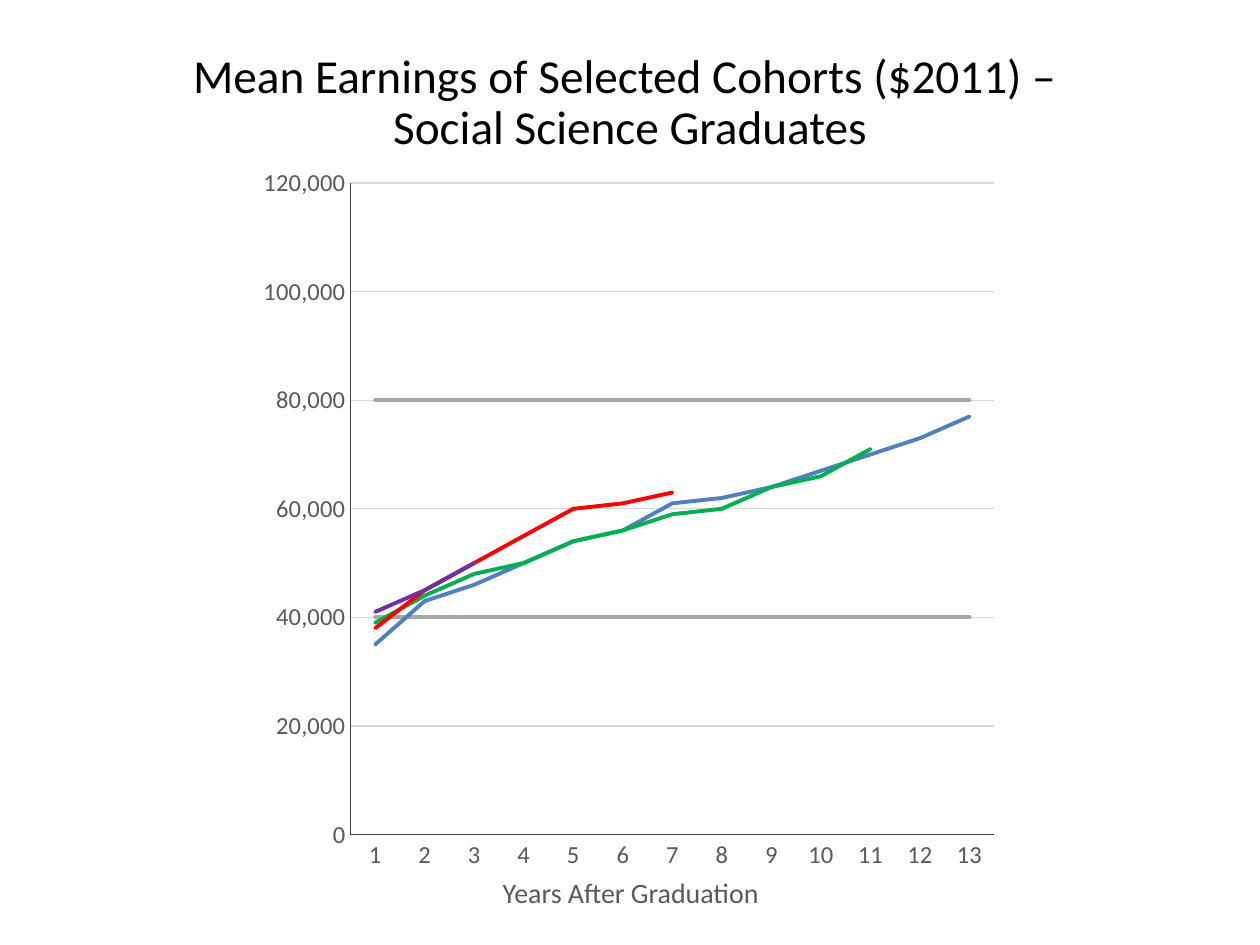
from dataclasses import dataclass

from lxml.etree import SubElement
from pptx import Presentation
from pptx.chart.data import CategoryChartData
from pptx.dml.color import RGBColor
from pptx.enum.chart import XL_CHART_TYPE, XL_TICK_MARK
from pptx.enum.text import MSO_ANCHOR, MSO_AUTO_SIZE, PP_ALIGN
from pptx.oxml.ns import qn
from pptx.util import Cm, Pt

TITLE = "Mean Earnings of Selected Cohorts ($2011) – \vSocial Science Graduates"
AXIS_CAPTION = "Years After Graduation"
YEARS = range(1, 14)

# Name, colour key, earnings in thousands for each year after graduation
COHORTS = [
    ("Series 1", "reference", [40] * len(YEARS)),
    ("Series 2", "reference", [80] * len(YEARS)),
    ("Series 3", "blue", [35, 43, 46, 50, 54, 56, 61, 62, 64, 67, 70, 73, 77]),
    ("Series 4", "green", [39, 44, 48, 50, 54, 56, 59, 60, 64, 66, 71]),
    ("Series 5", "red", [38, 45, 50, 55, 60, 61, 63]),
    ("Series 6", "purple", [41, 45, 50]),
]

TITLE_BOX = (1.75, 0.86, 21.9, 2.46)
CHART_BOX = (5.08, 3.1, 15.27, 14.76)
CAPTION_BOX = (9.83, 17.53, 5.77, 0.94)
PLOT_FRACTIONS = {"x": 0.13, "y": 0.04, "w": 0.85, "h": 0.89}


@dataclass(frozen=True)
class Theme:
    font: str = "Calibri"
    title_size: int = 27
    caption_size: int = 16
    label_size: int = 14
    thin: float = 0.75
    thick: float = 2.25
    title: str = "000000"
    text: str = "595959"
    axis: str = "404040"
    grid: str = "D9D9D9"
    reference: str = "A5A5A5"
    blue: str = "4F81BD"
    green: str = "00B050"
    red: str = "FF0000"
    purple: str = "7030A0"


THEME = Theme()


def lengths(box):
    return [Cm(value) for value in box]


def set_font(font, size, color):
    font.name = THEME.font
    font.size = Pt(size)
    font.color.rgb = RGBColor.from_string(color)


def set_line(line, color, width):
    line.color.rgb = RGBColor.from_string(color)
    line.width = Pt(width)


def add_title(slide):
    title = slide.shapes.title
    title.left, title.top, title.width, title.height = lengths(TITLE_BOX)
    frame = title.text_frame
    frame.text = TITLE
    frame.vertical_anchor = MSO_ANCHOR.MIDDLE
    paragraph = frame.paragraphs[0]
    paragraph.alignment = PP_ALIGN.CENTER
    paragraph.line_spacing = 0.9
    set_font(paragraph.font, THEME.title_size, THEME.title)


def fix_plot_area(chart):
    """Pin the inner plot area to fixed fractions of the chart."""
    plot_area = chart._chartSpace.find(".//" + qn("c:plotArea"))
    for automatic in plot_area.findall(qn("c:layout")):
        plot_area.remove(automatic)
    layout = SubElement(plot_area, qn("c:layout"))
    plot_area.insert(0, layout)
    manual = SubElement(layout, qn("c:manualLayout"))
    settings = {"layoutTarget": "inner", "xMode": "edge", "yMode": "edge", **PLOT_FRACTIONS}
    for tag, value in settings.items():
        SubElement(manual, qn("c:" + tag)).set("val", str(value))


def add_earnings_chart(slide):
    earnings = CategoryChartData(number_format="#,##0")
    earnings.categories = [str(year) for year in YEARS]
    for name, _, thousands in COHORTS:
        missing = [None] * (len(YEARS) - len(thousands))
        earnings.add_series(name, [value * 1000 for value in thousands] + missing)

    chart = slide.shapes.add_chart(XL_CHART_TYPE.LINE, *lengths(CHART_BOX), earnings).chart
    chart.has_title = False
    chart.has_legend = False
    set_font(chart.font, THEME.label_size, THEME.text)
    fix_plot_area(chart)

    plot = chart.plots[0]
    plot.vary_by_categories = False
    for series, (_, color, _) in zip(plot.series, COHORTS):
        series.smooth = False
        set_line(series.format.line, getattr(THEME, color), THEME.thick)
        for outline in series._element.iter(qn("a:ln")):
            outline.set("cap", "rnd")

    for axis in (chart.category_axis, chart.value_axis):
        axis.major_tick_mark = XL_TICK_MARK.NONE
        axis.minor_tick_mark = XL_TICK_MARK.NONE
        set_line(axis.format.line, THEME.axis, THEME.thin)
        set_font(axis.tick_labels.font, THEME.label_size, THEME.text)

    earnings_axis = chart.value_axis
    earnings_axis.minimum_scale = 0
    earnings_axis.maximum_scale = 120000
    earnings_axis.major_unit = 20000
    earnings_axis.tick_labels.number_format = "#,##0"
    earnings_axis.tick_labels.number_format_is_linked = False
    earnings_axis.has_major_gridlines = True
    set_line(earnings_axis.major_gridlines.format.line, THEME.grid, THEME.thin)


def add_axis_caption(slide):
    frame = slide.shapes.add_textbox(*lengths(CAPTION_BOX)).text_frame
    frame.word_wrap = False
    frame.auto_size = MSO_AUTO_SIZE.SHAPE_TO_FIT_TEXT
    frame.text = AXIS_CAPTION
    paragraph = frame.paragraphs[0]
    paragraph.alignment = PP_ALIGN.CENTER
    set_font(paragraph.font, THEME.caption_size, THEME.text)


def main():
    presentation = Presentation()
    presentation.slide_width = Cm(25.4)
    presentation.slide_height = Cm(19.05)
    title_only = presentation.slide_layouts[5]
    slide = presentation.slides.add_slide(title_only)
    add_title(slide)
    add_earnings_chart(slide)
    add_axis_caption(slide)
    presentation.save("out.pptx")


if __name__ == "__main__":
    main()
